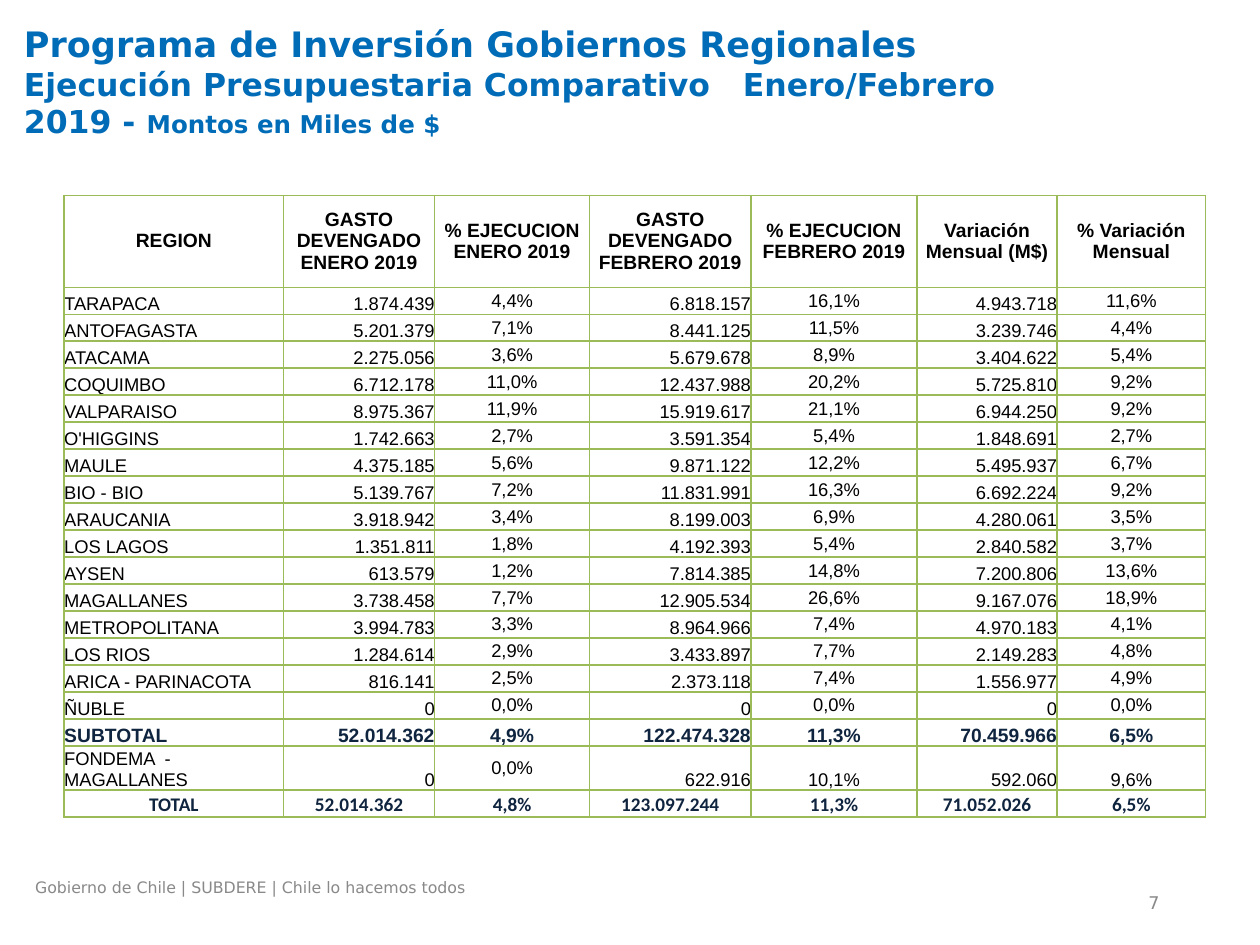
from copy import deepcopy

from lxml.etree import SubElement
from pptx import Presentation
from pptx.dml.color import RGBColor
from pptx.enum.text import MSO_ANCHOR, MSO_AUTO_SIZE, PP_ALIGN
from pptx.oxml.ns import qn
from pptx.util import Inches, Pt

TITLE_FONT = "DejaVu Sans"
BLUE, GREY, BLACK, NAVY, GREEN = "006CB7", "898989", "000000", "0F243E", "9BBB59"

TITLE = [
    [("Programa de Inversión Gobiernos Regionales", 20), "break",
     ("Ejecución Presupuestaria Comparativo   Enero/Febrero", 18)],
    [("2019 - ", 18), ("Montos en Miles de $", 14)],
]
FOOTER = "Gobierno de Chile | SUBDERE | Chile lo hacemos todos"
PAGE_NUMBER = "7"

HEADER = ("REGION", "GASTO DEVENGADO ENERO 2019", "% EJECUCION ENERO 2019",
          "GASTO DEVENGADO FEBRERO 2019", "% EJECUCION FEBRERO 2019",
          "Variación Mensual (M$)", "% Variación Mensual")
REGIONS = [
    ("TARAPACA", "1.874.439", "4,4%", "6.818.157", "16,1%", "4.943.718", "11,6%"),
    ("ANTOFAGASTA", "5.201.379", "7,1%", "8.441.125", "11,5%", "3.239.746", "4,4%"),
    ("ATACAMA", "2.275.056", "3,6%", "5.679.678", "8,9%", "3.404.622", "5,4%"),
    ("COQUIMBO", "6.712.178", "11,0%", "12.437.988", "20,2%", "5.725.810", "9,2%"),
    ("VALPARAISO", "8.975.367", "11,9%", "15.919.617", "21,1%", "6.944.250", "9,2%"),
    ("O'HIGGINS", "1.742.663", "2,7%", "3.591.354", "5,4%", "1.848.691", "2,7%"),
    ("MAULE", "4.375.185", "5,6%", "9.871.122", "12,2%", "5.495.937", "6,7%"),
    ("BIO - BIO", "5.139.767", "7,2%", "11.831.991", "16,3%", "6.692.224", "9,2%"),
    ("ARAUCANIA", "3.918.942", "3,4%", "8.199.003", "6,9%", "4.280.061", "3,5%"),
    ("LOS LAGOS", "1.351.811", "1,8%", "4.192.393", "5,4%", "2.840.582", "3,7%"),
    ("AYSEN", "613.579", "1,2%", "7.814.385", "14,8%", "7.200.806", "13,6%"),
    ("MAGALLANES", "3.738.458", "7,7%", "12.905.534", "26,6%", "9.167.076", "18,9%"),
    ("METROPOLITANA", "3.994.783", "3,3%", "8.964.966", "7,4%", "4.970.183", "4,1%"),
    ("LOS RIOS", "1.284.614", "2,9%", "3.433.897", "7,7%", "2.149.283", "4,8%"),
    ("ARICA - PARINACOTA", "816.141", "2,5%", "2.373.118", "7,4%", "1.556.977", "4,9%"),
    ("ÑUBLE", "0", "0,0%", "0", "0,0%", "0", "0,0%"),
]
SUBTOTAL = ("SUBTOTAL", "52.014.362", "4,9%", "122.474.328", "11,3%", "70.459.966", "6,5%")
FONDEMA = ("FONDEMA  - MAGALLANES", "0", "0,0%", "622.916", "10,1%", "592.060", "9,6%")
TOTAL = ("TOTAL", "52.014.362", "4,8%", "123.097.244", "11,3%", "71.052.026", "6,5%")

COLUMN_WIDTHS = (1.74, 1.2, 1.23, 1.28, 1.32, 1.11, 1.18)
TABLE_HEIGHT, HEADER_HEIGHT = 4.8, 0.73
CENTERED = [PP_ALIGN.CENTER] * 7
BY_COLUMN = [PP_ALIGN.LEFT] + [PP_ALIGN.RIGHT, PP_ALIGN.CENTER] * 3

HEADER_STYLE = (11, "Arial", BLACK, True, CENTERED, range(7))
REGION_STYLE = (10.5, "Arial", BLACK, False, BY_COLUMN, (2, 4, 6))
SUBTOTAL_STYLE = (11, "Arial", NAVY, True, BY_COLUMN, ())
FONDEMA_STYLE = (10.5, "Arial", BLACK, False, BY_COLUMN, (2,))
TOTAL_STYLE = (11, "Calibri", NAVY, True, CENTERED, ())

ROWS = [(HEADER, HEADER_STYLE), *((region, REGION_STYLE) for region in REGIONS),
        (SUBTOTAL, SUBTOTAL_STYLE), (FONDEMA, FONDEMA_STYLE), (TOTAL, TOTAL_STYLE)]


def format_run(run, size, name, color, bold=False):
    run.font.size = Pt(size)
    run.font.name = name
    run.font.bold = bold
    run.font.color.rgb = RGBColor.from_string(color)


def place_title(slide):
    title = slide.shapes.title
    title.left, title.top, title.width, title.height = map(Inches, (0.09, 0.13, 8.97, 1.25))
    text_frame = title.text_frame
    text_frame.auto_size = MSO_AUTO_SIZE.NONE
    text_frame.vertical_anchor = MSO_ANCHOR.TOP
    for index, parts in enumerate(TITLE):
        paragraph = text_frame.add_paragraph() if index else text_frame.paragraphs[0]
        paragraph.alignment = PP_ALIGN.LEFT
        for part in parts:
            if part == "break":
                paragraph.add_line_break()
                line_break = paragraph._p.find(qn("a:br"))
                line_break.append(deepcopy(run._r.rPr))
                continue
            text, size = part
            run = paragraph.add_run()
            run.text = text
            format_run(run, size, TITLE_FONT, BLUE, True)


def add_label(slide, text, box, size, alignment, anchor):
    text_frame = slide.shapes.add_textbox(*map(Inches, box)).text_frame
    text_frame.word_wrap = True
    text_frame.vertical_anchor = anchor
    text_frame.text = text
    paragraph = text_frame.paragraphs[0]
    paragraph.alignment = alignment
    format_run(paragraph.runs[0], size, TITLE_FONT, GREY)


def add_borders(cell):
    properties = cell._tc.get_or_add_tcPr()
    for side in ("L", "R", "T", "B"):
        line = SubElement(properties, qn(f"a:ln{side}"), w=str(Pt(1)))
        fill = SubElement(line, qn("a:solidFill"))
        SubElement(fill, qn("a:srgbClr"), val=GREEN)


def fill_cell(cell, text, style, column):
    size, font, color, bold, alignments, middle_columns = style
    cell.margin_left = cell.margin_right = cell.margin_top = cell.margin_bottom = 0
    cell.vertical_anchor = MSO_ANCHOR.MIDDLE if column in middle_columns else MSO_ANCHOR.BOTTOM
    add_borders(cell)
    cell.fill.background()
    cell.text_frame.text = text
    paragraph = cell.text_frame.paragraphs[0]
    paragraph.alignment = alignments[column]
    format_run(paragraph.runs[0], size, font, color, bold)


def add_budget_table(slide):
    frame = slide.shapes.add_table(len(ROWS), len(HEADER), Inches(0.51), Inches(1.55),
                                   Inches(sum(COLUMN_WIDTHS)), Inches(TABLE_HEIGHT))
    table = frame.table
    table.first_row = table.horz_banding = False
    for column, width in zip(table.columns, COLUMN_WIDTHS):
        column.width = Inches(width)
    row_height = (TABLE_HEIGHT - HEADER_HEIGHT) / (len(ROWS) - 1)
    for row_index, (values, style) in enumerate(ROWS):
        table.rows[row_index].height = Inches(row_height if row_index else HEADER_HEIGHT)
        for column_index, text in enumerate(values):
            fill_cell(table.cell(row_index, column_index), text, style, column_index)


def main():
    presentation = Presentation()
    presentation.slide_width, presentation.slide_height = Inches(10), Inches(7.5)
    slide = presentation.slides.add_slide(presentation.slide_layouts[5])
    place_title(slide)
    add_label(slide, FOOTER, (0.18, 6.92, 6.48, 0.27), 9, PP_ALIGN.LEFT, MSO_ANCHOR.TOP)
    add_label(slide, PAGE_NUMBER, (6.97, 7.06, 2.33, 0.21), 10, PP_ALIGN.RIGHT, MSO_ANCHOR.MIDDLE)
    add_budget_table(slide)
    presentation.save("out.pptx")


if __name__ == "__main__":
    main()
